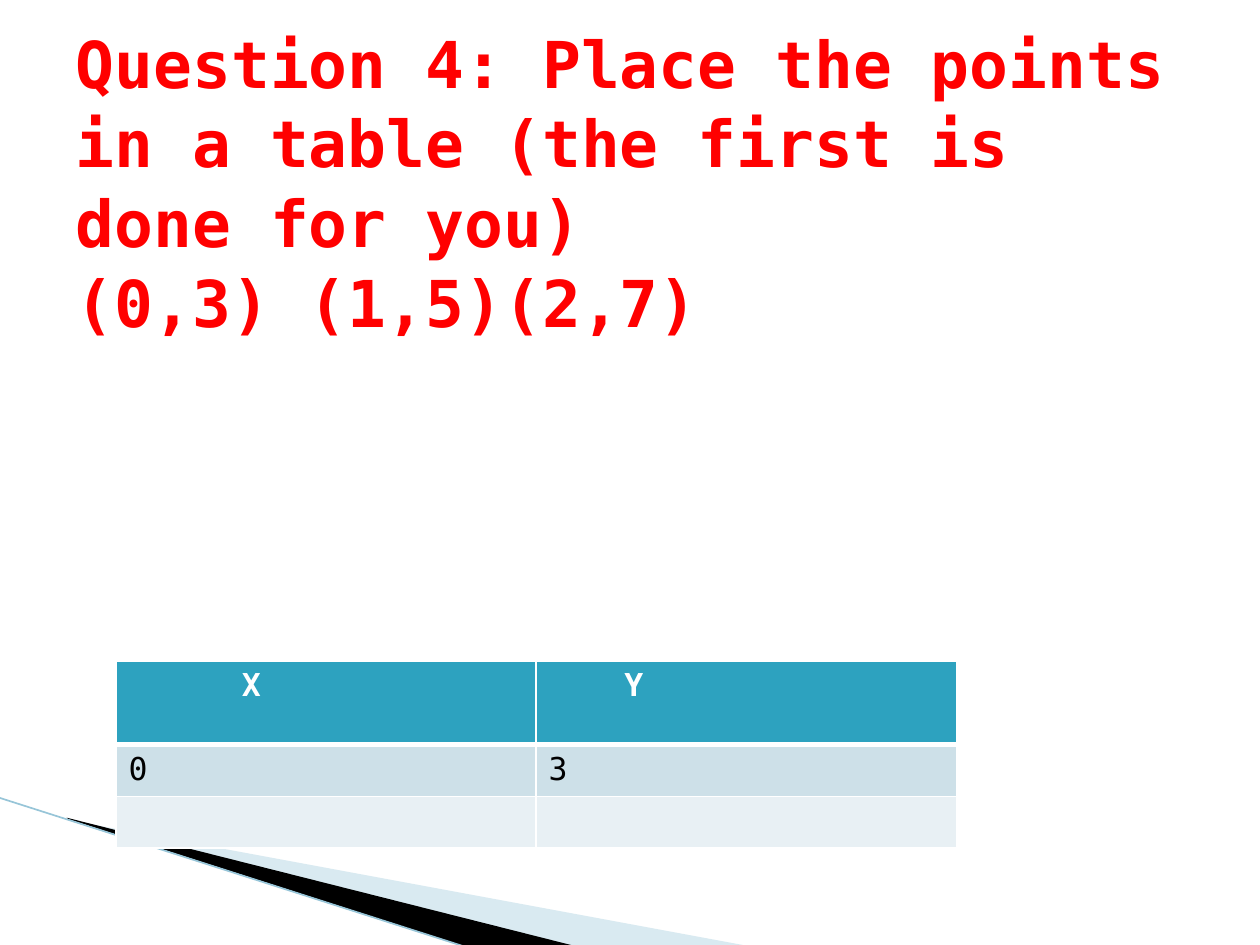
from pptx import Presentation
from pptx.dml.color import RGBColor
from pptx.enum.shapes import MSO_CONNECTOR
from pptx.enum.text import MSO_ANCHOR, MSO_AUTO_SIZE, PP_ALIGN
from pptx.oxml.ns import qn
from pptx.util import Inches, Pt
from lxml.etree import SubElement

FONT = "DejaVu Sans Mono"
HUES = {
    "title": "FF0000", "head": "2DA2BF", "odd": "CDE0E8", "even": "E8F0F4",
    "white": "FFFFFF", "black": "000000", "pale": "A0CBDC", "edge": "97C5D8",
}


def hue(name):
    """Return the named colour."""
    return RGBColor.from_string(HUES[name])


def style(font, size, name, bold):
    """Set the face, size, colour and weight of a font."""
    font.name, font.size, font.bold = FONT, Pt(size), bold
    font.color.rgb = hue(name)


def add_wedge(slide, box, points, name, alpha=100):
    """Draw a filled outline from points relative to the box corner."""
    left, top = box[:2]
    spots = [(Inches(left + x), Inches(top + y)) for x, y in points]
    pen = slide.shapes.build_freeform(*spots[0])
    pen.add_line_segments(spots[1:], close=True)
    wedge = pen.convert_to_shape()
    wedge.shadow.inherit = False
    wedge.fill.solid()
    wedge.fill.fore_color.rgb = hue(name)
    wedge.line.fill.background()
    if alpha < 100:
        tone = wedge.fill._xPr.find(qn("a:solidFill"))[0]
        SubElement(tone, qn("a:alpha"), val=str(alpha * 1000))


def add_decor(slide, box):
    """Draw the sweeping wedges and edge line in the lower left corner."""
    left, top, width, height = box
    add_wedge(slide, box, [(0.56, 0.18), (5.96, 1.18), (4.57, 1.18), (0.56, 0.17)],
              "pale", 40)
    add_wedge(slide, box, [(0.54, 0.16), (4.58, 1.18), (3.73, 1.19), (0.55, 0.17)],
              "black")
    edge = slide.shapes.add_connector(
        MSO_CONNECTOR.STRAIGHT, Inches(left), Inches(top),
        Inches(left + 3.72), Inches(top + height))
    edge.line.color.rgb = hue("edge")
    edge.line.width = Pt(0.95)
    SubElement(edge._element.spPr, qn("a:effectLst"))


def add_title(slide, box):
    """Fill the title placeholder with the question."""
    title = slide.shapes.title
    title.left, title.top, title.width, title.height = map(Inches, box)
    frame = title.text_frame
    frame.word_wrap = True
    frame.auto_size = MSO_AUTO_SIZE.NONE
    frame.vertical_anchor = MSO_ANCHOR.MIDDLE
    frame.margin_bottom = Inches(0.59)
    frame.text = ("Question 4: Place the points in a table "
                  "(the first is done for you)\v(0,3) (1,5)(2,7)")
    para = frame.paragraphs[0]
    para.alignment = PP_ALIGN.LEFT
    para.line_spacing = 1.03
    style(para.font, 36.9, "title", True)
    for run in para.runs:
        style(run.font, 36.9, "title", True)


def add_border(cell, base):
    """Rule a cell in white, with the given width at its base."""
    props = cell._tc.get_or_add_tcPr()
    sides = zip(("lnL", "lnR", "lnT", "lnB"), (1, 1, 1, base))
    for spot, (side, width) in enumerate(sides):
        line = SubElement(props, qn(f"a:{side}"), w=str(Pt(width)))
        fill = SubElement(line, qn("a:solidFill"))
        SubElement(fill, qn("a:srgbClr"), val=HUES["white"])
        props.insert(spot, line)


def add_grid(slide, box):
    """Place the table of points with its first pair filled in."""
    rows = [("X", "Y"), ("0", "3"), ("", "")]
    fills = ("head", "odd", "even")
    highs = (0.66, 0.41, 0.41)
    grid = slide.shapes.add_table(len(rows), 2, *map(Inches, box)).table
    for col in grid.columns:
        col.width = Inches(box[2] / 2)
    for i, row in enumerate(rows):
        grid.rows[i].height = Inches(highs[i])
        for j, text in enumerate(row):
            cell = grid.cell(i, j)
            cell.fill.solid()
            cell.fill.fore_color.rgb = hue(fills[i])
            add_border(cell, 3 if i == 0 else 1)
            if i == 0:
                cell.margin_left = Inches((1, 0.7)[j])
            cell.text_frame.text = text
            for run in cell.text_frame.paragraphs[0].runs:
                style(run.font, 18, "black" if i else "white", i == 0)


def main():
    """Build the slide and save it."""
    deck = Presentation()
    deck.slide_width, deck.slide_height = Inches(10), Inches(7.5)
    slide = deck.slides.add_slide(deck.slide_layouts[5])
    add_decor(slide, (-0.01, 6.33, 5.96, 1.19))
    add_title(slide, (0.5, 1.08, 9, 1.25))
    add_grid(slide, (0.92, 5.25, 6.67, 1.48))
    deck.save("out.pptx")


if __name__ == "__main__":
    main()
